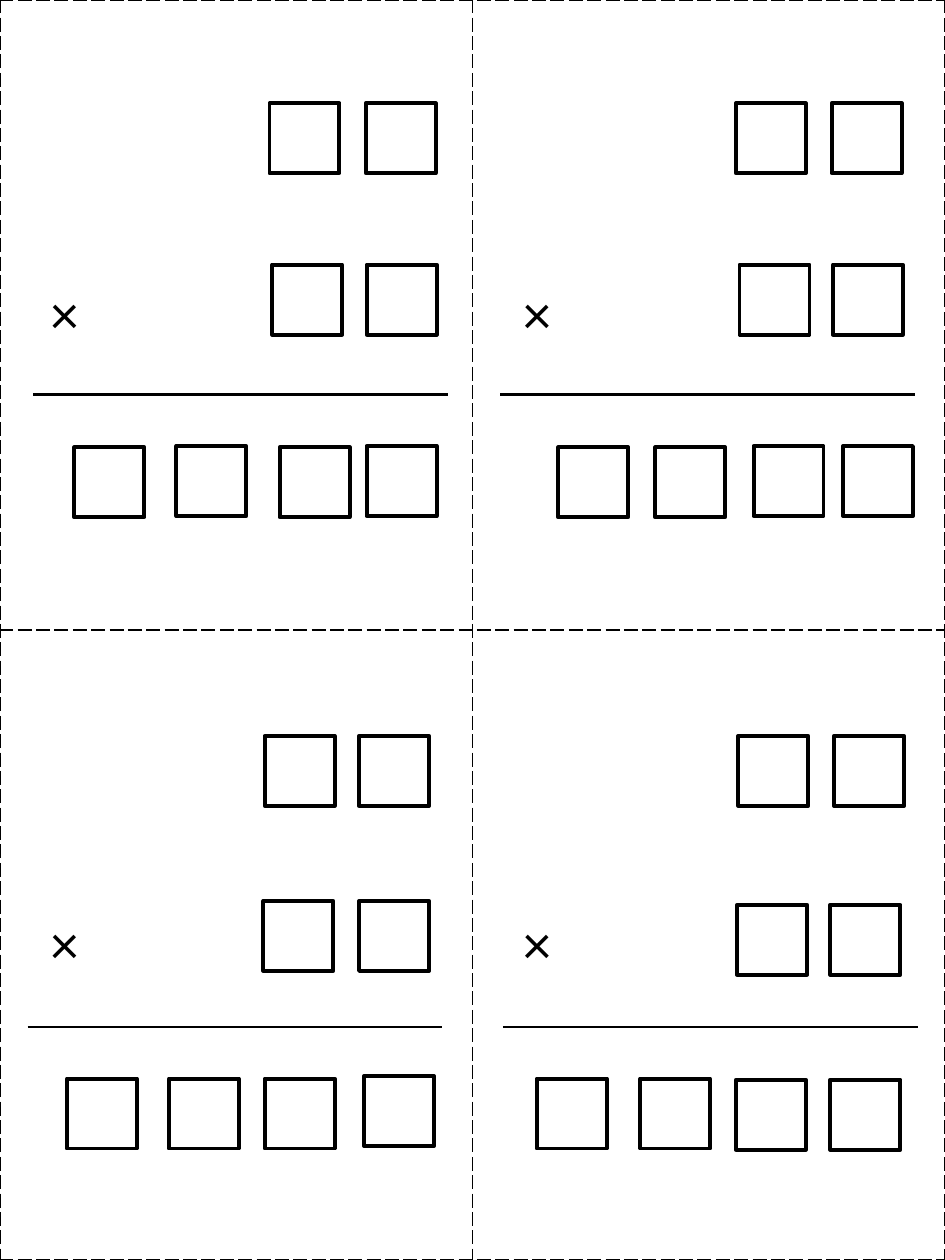
"""Build a sheet of four cut-out cards for two-digit multiplication."""
from dataclasses import dataclass

from lxml.etree import SubElement
from pptx import Presentation
from pptx.dml.color import RGBColor as Rgb
from pptx.enum.shapes import MSO_CONNECTOR as Connector, MSO_SHAPE as Shape
from pptx.enum.text import MSO_ANCHOR as Anchor
from pptx.oxml import parse_xml
from pptx.oxml.ns import qn
from pptx.util import Pt


@dataclass(frozen=True)
class Theme:
    ink: str = "000000"
    paper: str = "FFFFFF"
    font: str = "Calibri"
    sign_size: float = 32
    box_line: float = 2.25
    rule_line: float = 1.5
    cut_line: float = 1


THEME = Theme()
INK, PAPER = Rgb.from_string(THEME.ink), Rgb.from_string(THEME.paper)
PAGE_WIDTH, PAGE_HEIGHT = 540, 720
COLUMNS = ROWS = 2
BOX = 40
RULE_LENGTH = 237
SIGN = "×"
SIGN_INDENT = 28.9

CARDS = [
    {
        "factors": [(59, [154, 209]), (151.2, [155.5, 209.5])],
        "rule": (18.9, 225.4),
        "product": [(255.6, [42.5, 159.8]), (254.9, [100.8, 209.5])],
    },
    {
        "factors": [(59, [420.5, 475.2]), (151.2, [422.6, 475.9])],
        "rule": (285.8, 225.4),
        "product": [(255.6, [319, 374.4]), (254.9, [430.6, 481.7])],
    },
    {
        "factors": [(420.5, [151.2, 205.2]), (514.8, [150.5, 205.2])],
        "rule": (15.8, 586.8),
        "product": [(616.3, [38.2, 96.5, 151.2]), (614.9, [208.1])],
    },
    {
        "factors": [(420.5, [421.9, 476.6]), (517, [421.2, 474.5])],
        "rule": (287.3, 586.8),
        "product": [(616.3, [306.7, 365.8]), (617, [420.5, 474.5])],
    },
]

BORDER = (
    '<a:{side} xmlns:a="http://schemas.openxmlformats.org/drawingml/2006/main" w="{width}">'
    '<a:solidFill><a:srgbClr val="{color}"/></a:solidFill><a:prstDash val="lgDash"/></a:{side}>'
)


def dash_borders(cell):
    properties = cell._tc.get_or_add_tcPr()
    for place, side in enumerate(("lnL", "lnR", "lnT", "lnB")):
        border = BORDER.format(side=side, width=int(Pt(THEME.cut_line)), color=THEME.ink)
        properties.insert(place, parse_xml(border))


def add_cut_grid(slide):
    grid = slide.shapes.add_table(ROWS, COLUMNS, 0, 0, Pt(PAGE_WIDTH), Pt(PAGE_HEIGHT)).table
    grid.first_row = grid.horz_banding = False
    for cell in grid.iter_cells():
        cell.fill.background()
        cell.vertical_anchor = Anchor.MIDDLE
        cell.margin_left = Pt(SIGN_INDENT)
        cell.text = SIGN
        font = cell.text_frame.paragraphs[0].font
        font.name, font.size, font.bold = THEME.font, Pt(THEME.sign_size), False
        font.color.rgb = INK
        dash_borders(cell)


def add_box(slide, left, top):
    box = slide.shapes.add_shape(Shape.RECTANGLE, Pt(left), Pt(top), Pt(BOX), Pt(BOX))
    box.shadow.inherit = False
    box.fill.solid()
    box.fill.fore_color.rgb = PAPER
    box.line.color.rgb = INK
    box.line.width = Pt(THEME.box_line)


def add_rule(slide, left, top):
    rule = slide.shapes.add_connector(
        Connector.STRAIGHT, Pt(left), Pt(top), Pt(left + RULE_LENGTH), Pt(top)
    )
    rule.line.color.rgb = INK
    rule.line.width = Pt(THEME.rule_line)
    SubElement(rule._element.spPr, qn("a:effectLst"))


def main():
    deck = Presentation()
    deck.slide_width, deck.slide_height = Pt(PAGE_WIDTH), Pt(PAGE_HEIGHT)
    slide = deck.slides.add_slide(deck.slide_layouts[6])
    add_cut_grid(slide)
    for card in CARDS:
        for top, lefts in card["factors"] + card["product"]:
            for left in lefts:
                add_box(slide, left, top)
        add_rule(slide, *card["rule"])
    deck.save("out.pptx")


if __name__ == "__main__":
    main()
